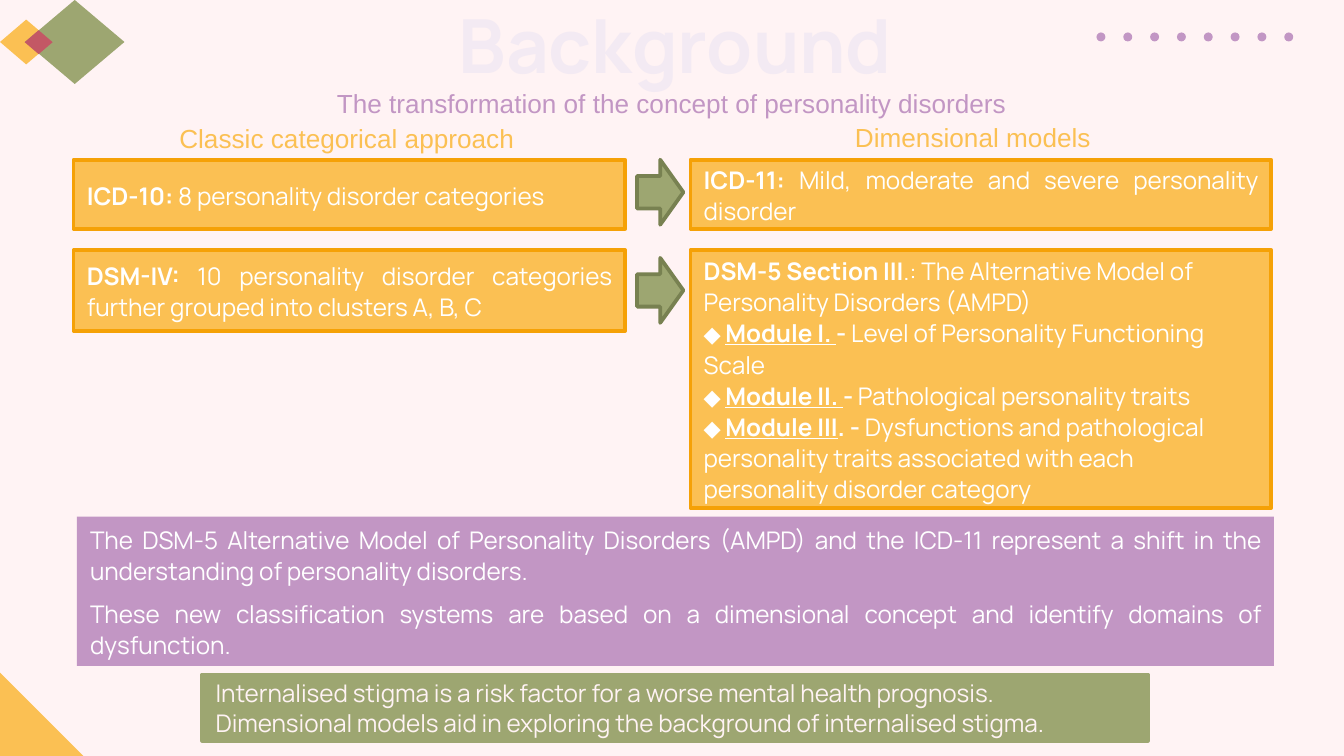
"""Build the Background slide on the shift to dimensional models of personality disorders."""
from dataclasses import dataclass

from pptx import Presentation
from pptx.dml.color import RGBColor
from pptx.dml.fill import FillFormat
from pptx.enum.shapes import MSO_SHAPE
from pptx.enum.text import MSO_ANCHOR, MSO_AUTO_SIZE, PP_ALIGN
from pptx.util import Pt

RECTANGLE, ARROW = MSO_SHAPE.RECTANGLE, MSO_SHAPE.RIGHT_ARROW
DIAMOND, DOT, CORNER = MSO_SHAPE.DIAMOND, MSO_SHAPE.OVAL, MSO_SHAPE.RIGHT_TRIANGLE
LEFT, CENTER, JUSTIFY = PP_ALIGN.LEFT, PP_ALIGN.CENTER, PP_ALIGN.JUSTIFY
TOP, MIDDLE = MSO_ANCHOR.TOP, MSO_ANCHOR.MIDDLE
NO_AUTOFIT = MSO_AUTO_SIZE.NONE

YELLOW, ORANGE, PURPLE, RED = "FBC053", "F5A106", "C296C4", "C35865"
GREEN, DARK_GREEN = "9DA671", "788151"
WHITE, BLUSH, LILAC = "FFFFFF", "FFF3F4", "F3EAF3"


@dataclass(frozen=True)
class Area:
    left: float
    top: float
    width: float
    height: float


@dataclass(frozen=True)
class Span:
    text: str
    bold: bool = False
    underline: bool = False
    size: float = 13


@dataclass(frozen=True)
class Style:
    color: str = WHITE
    font: str = "Manrope"
    align: PP_ALIGN = JUSTIFY
    anchor: MSO_ANCHOR = MIDDLE
    spacing: float = 1.07
    gap: float = 0


@dataclass(frozen=True)
class Panel:
    area: Area
    fill: str
    line: str | None
    paragraphs: list[list[Span]]
    style: Style = Style()


@dataclass(frozen=True)
class Heading:
    area: Area
    text: str
    color: str
    align: PP_ALIGN = CENTER


def paint(fill: FillFormat, color: str) -> None:
    """Make a fill solid in the given hex colour."""
    fill.solid()
    fill.fore_color.rgb = RGBColor.from_string(color)


def place(box, area: Area) -> None:
    """Move and size a box."""
    box.left, box.top = Pt(area.left), Pt(area.top)
    box.width, box.height = Pt(area.width), Pt(area.height)


def draw_shape(shapes, kind: MSO_SHAPE, area: Area, fill: str, line: str | None = None):
    """Draw a flat preset shape and return it."""
    shape = shapes.add_shape(kind, Pt(area.left), Pt(area.top), Pt(area.width), Pt(area.height))
    shape.shadow.inherit = False
    paint(shape.fill, fill)
    if line:
        paint(shape.line.fill, line)
        shape.line.width = Pt(2)
    else:
        shape.line.fill.background()
    return shape


def write(box, paragraphs: list[list[Span]], style: Style) -> None:
    """Fill a box with styled paragraphs."""
    frame = box.text_frame
    frame.word_wrap = True
    frame.auto_size = NO_AUTOFIT
    frame.vertical_anchor = style.anchor
    for index, spans in enumerate(paragraphs):
        para = frame.add_paragraph() if index else frame.paragraphs[0]
        para.alignment = style.align
        para.line_spacing = style.spacing
        para.space_before = Pt(0)
        para.space_after = Pt(style.gap if index < len(paragraphs) - 1 else 0)
        for span in spans:
            run = para.add_run()
            run.text = span.text
            run.font.name = style.font
            run.font.size = Pt(span.size)
            run.font.bold = span.bold
            run.font.underline = span.underline
            paint(run.font.fill, style.color)


def draw_panel(shapes, panel: Panel) -> None:
    """Draw a rectangle with its text."""
    box = draw_shape(shapes, RECTANGLE, panel.area, panel.fill, panel.line)
    write(box, panel.paragraphs, panel.style)


def draw_heading(shapes, heading: Heading) -> None:
    """Draw a one-line heading."""
    area = heading.area
    box = shapes.add_textbox(Pt(area.left), Pt(area.top), Pt(area.width), Pt(area.height))
    style = Style(heading.color, "Arial", heading.align, TOP, 1)
    write(box, [[Span(heading.text, size=14)]], style)


def module(name: str, dash: str, text: str) -> list[Span]:
    """Return the spans of one module line."""
    return [Span("◆ ", size=12), Span(name, True, True), Span(dash, True), Span(text)]


CLASSIC_LEFT, CLASSIC_WIDTH = 39.4, 295.5
MODEL_LEFT, MODEL_WIDTH = 369.9, 311.2
FIRST_TOP, SECOND_TOP, FIRST_HEIGHT = 85.6, 133.9, 37

MODULES = [
    [Span("DSM-5 Section III", True),
     Span(".: The Alternative Model of Personality Disorders (AMPD)")],
    module("Module I. ", "- ", "Level of Personality Functioning Scale"),
    module("Module II. ", "- ", "Pathological personality traits"),
    module("Module III", ". - ", "Dysfunctions and pathological personality traits associated "
           "with each personality disorder category"),
]
SHIFT = [
    [Span("The DSM-5 Alternative Model of Personality Disorders (AMPD) and the ICD-11 represent "
          "a shift in the understanding of personality disorders. ")],
    [Span("These new classification systems are based on a dimensional concept and identify "
          "domains of dysfunction.")],
]
STIGMA = [
    [Span("Internalised stigma is a risk factor for a worse mental health prognosis.")],
    [Span("Dimensional models aid in exploring the background of internalised stigma.")],
]
PANELS = [
    Panel(Area(41.2, 276.8, 641.3, 80), PURPLE, None, SHIFT, Style(anchor=TOP, gap=6)),
    Panel(Area(CLASSIC_LEFT, FIRST_TOP, CLASSIC_WIDTH, FIRST_HEIGHT), YELLOW, ORANGE,
          [[Span("ICD-10: ", True), Span("8 personality disorder categories")]]),
    Panel(Area(CLASSIC_LEFT, SECOND_TOP, CLASSIC_WIDTH, 43.4), YELLOW, ORANGE,
          [[Span("DSM-IV: ", True),
            Span("10 personality disorder categories further grouped into clusters A, B, C")]]),
    Panel(Area(MODEL_LEFT, FIRST_TOP, MODEL_WIDTH, FIRST_HEIGHT), YELLOW, ORANGE,
          [[Span("ICD-11: ", True), Span("Mild, moderate and severe personality disorder")]]),
    Panel(Area(MODEL_LEFT, SECOND_TOP, MODEL_WIDTH, 138.2), YELLOW, ORANGE, MODULES,
          Style(align=LEFT)),
    Panel(Area(108.4, 361.4, 506.5, 35.6), GREEN, GREEN, STIGMA,
          Style(BLUSH, align=LEFT, spacing=1)),
]
HEADINGS = [
    Heading(Area(148, 43.2, 424, 24.2), "The transformation of the concept of personality disorders",
            PURPLE),
    Heading(Area(89, 62, 360, 24.2), "Classic categorical approach", YELLOW, LEFT),
    Heading(Area(365.7, 61.7, 311, 24.2), "Dimensional models", YELLOW),
]
DIAMONDS = [
    (Area(0, 10.5, 28.1, 24), YELLOW),
    (Area(13.4, 0, 53.3, 45), GREEN),
    (Area(13.2, 16.2, 15, 12.8), RED),
]


def main() -> None:
    """Build and save the deck."""
    deck = Presentation()
    deck.slide_width, deck.slide_height = Pt(720), Pt(405)
    page = deck.slides.add_slide(deck.slide_layouts[5])
    paint(page.background.fill, BLUSH)

    title = page.shapes.title
    place(title, Area(58.3, -8, 607, 45))
    frame = title.text_frame
    frame.margin_left = frame.margin_right = frame.margin_top = frame.margin_bottom = Pt(7.2)
    write(title, [[Span("Background", True, size=40)]],
          Style(LILAC, align=CENTER, anchor=TOP, spacing=1))

    draw_shape(page.shapes, CORNER, Area(-0.7, 359.6, 46, 46), YELLOW)
    dots = page.shapes.add_group_shape()
    for index in range(8):
        draw_shape(dots.shapes, DOT, Area(587.4 + 14.37 * index, 17.4, 4.8, 4.8), PURPLE)
    diamonds = page.shapes.add_group_shape()
    for area, color in DIAMONDS:
        draw_shape(diamonds.shapes, DIAMOND, area, color)

    for panel in PANELS:
        draw_panel(page.shapes, panel)
    for top in (85.6, 138.2):
        draw_shape(page.shapes, ARROW, Area(341.3, top, 24.8, 34.8), GREEN, DARK_GREEN)
    for heading in HEADINGS:
        draw_heading(page.shapes, heading)
    deck.save("out.pptx")


if __name__ == "__main__":
    main()
